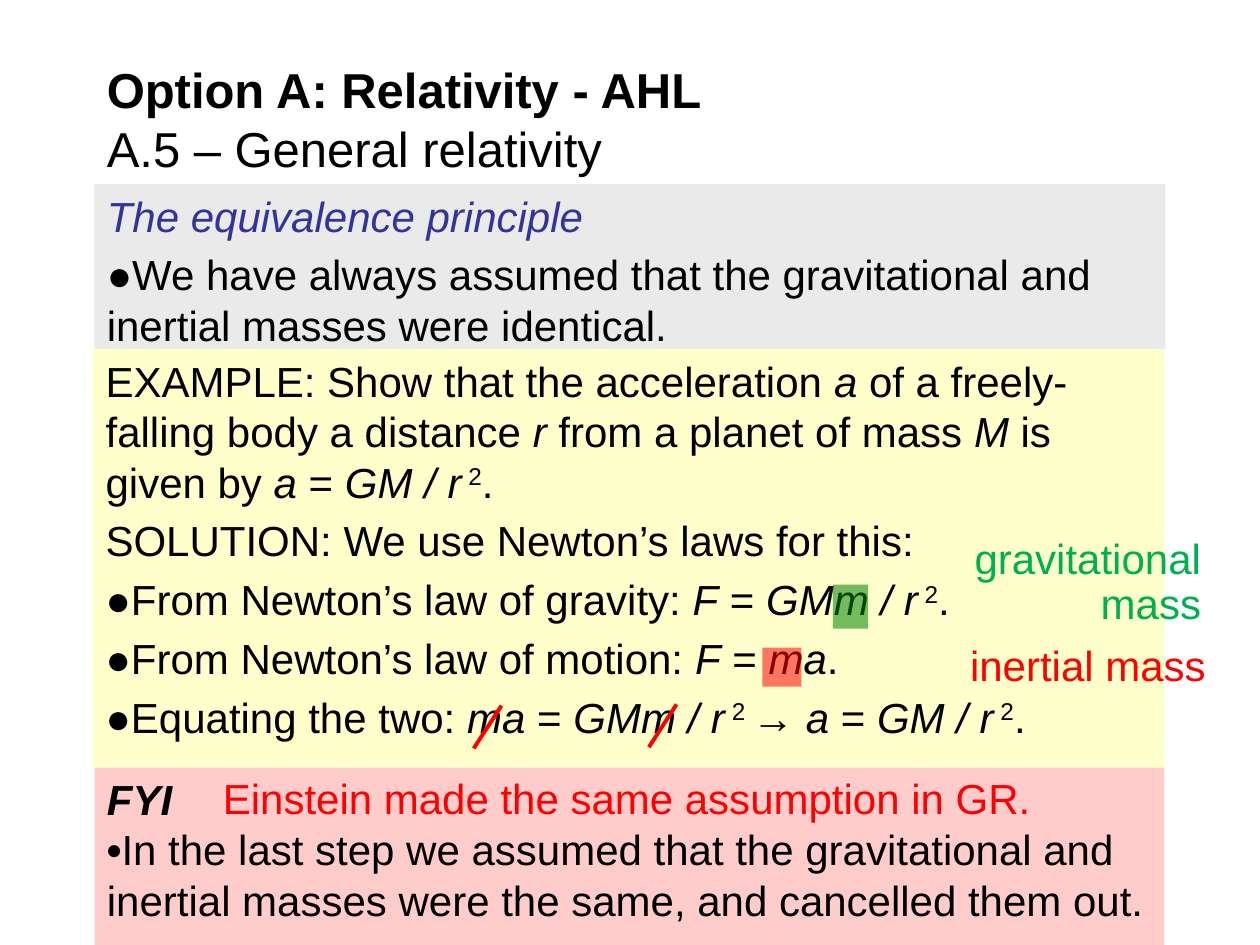
from pptx import Presentation
from pptx.dml.color import RGBColor
from pptx.enum.shapes import MSO_CONNECTOR as LINE, MSO_SHAPE as SHAPE
from pptx.enum.text import MSO_ANCHOR as ANCHOR, PP_ALIGN as ALIGN
from pptx.oxml.ns import qn
from pptx.util import Inches, Pt
from lxml import etree

BLACK = RGBColor(0, 0, 0)
BLUE = RGBColor(0x33, 0x33, 0x99)
GREEN = RGBColor(0x00, 0xB0, 0x50)
DARK = RGBColor(0x00, 0x80, 0x00)
RED = RGBColor(0xFF, 0, 0)
PINK = RGBColor(0xFF, 0xCC, 0xCC)
CREAM = RGBColor(0xFF, 0xFF, 0xCC)
GRAY = RGBColor(0xEA, 0xEA, 0xEA)

prs = Presentation()
prs.slide_width, prs.slide_height = Inches(10), Inches(7.5)
slide = prs.slides.add_slide(prs.slide_layouts[6])
shapes = slide.shapes


def write(frame, lines, color=BLACK, size=24, gap=4.8):
    """Fill a frame; _.._ marks italic and ^..^ superscript."""
    frame.word_wrap = True
    for n, line in enumerate(lines):
        para = frame.add_paragraph() if n else frame.paragraphs[0]
        para.alignment = ALIGN.LEFT
        para.space_before = Pt(gap if n else 0)
        for i, part in enumerate(line.split("_")):
            for j, bit in enumerate(part.split("^")):
                if not bit:
                    continue
                run = para.add_run()
                run.text = bit
                font = run.font
                font.name, font.size = "Arial", Pt(size)
                font.color.rgb = color
                font.italic = i % 2 == 1
                if j % 2:
                    font._element.set("baseline", "30000")


def block(x, y, w, h, color):
    rect = shapes.add_shape(SHAPE.RECTANGLE, Inches(x), Inches(y), Inches(w), Inches(h))
    rect.shadow.inherit = False
    rect.fill.solid()
    rect.fill.fore_color.rgb = color
    rect.line.fill.background()
    rect.text_frame.vertical_anchor = ANCHOR.TOP
    return rect


# Panels
note = block(0.75, 6.09, 8.49, 1.41, PINK).text_frame
write(note, [
    "_FYI_",
    "•^^In the last step we assumed that the gravitational and inertial masses "
    "were the same, and cancelled them out.",
], gap=0)
for para in note.paragraphs:
    para.runs[0].font.bold = True

proof = block(0.74, 2.77, 8.5, 3.32, CREAM).text_frame
write(proof, [
    "EXAMPLE: Show that the acceleration _a_ of a freely-falling body a distance _r_ "
    "from a planet of mass _M_ is given by _a_ = _GM / r_^ 2^.",
    "SOLUTION: We use Newton’s laws for this:",
    "_●_From Newton’s law of gravity:_ F_ = _GMm / r_^ 2^.",
    "_●_From Newton’s law of motion: _F_ = _ma_.",
    "_●_Equating the two: _ma_ = _GMm / r_^ 2 ^→ _a_ = _GM / r_^ 2^.",
])

intro = block(0.75, 1.46, 8.5, 1.31, GRAY).text_frame
write(intro, [
    "_The equivalence principle_",
    "●We have always assumed that the gravitational and inertial masses were identical.",
])
intro.paragraphs[0].runs[0].font.color.rgb = BLUE

# Coloured remarks
for x, y, w, h, text, color, align in [
    (7.38, 4.22, 2.25, 0.79, "gravitational mass", GREEN, ALIGN.RIGHT),
    (7.6, 5.07, 2.22, 0.41, "inertial mass", RED, ALIGN.LEFT),
    (1.67, 6.13, 7.81, 0.41, "Einstein made the same assumption in GR.", RED, ALIGN.LEFT),
]:
    frame = shapes.add_textbox(Inches(x), Inches(y), Inches(w), Inches(h)).text_frame
    write(frame, [text], color)
    frame.paragraphs[0].alignment = align
    frame.paragraphs[0].line_spacing = 0.9

# Translucent marks over the two masses
for x, y, w, h, color in [(6.61, 4.64, 0.28, 0.35, DARK), (6.05, 5.14, 0.31, 0.31, RED)]:
    mark = block(x, y, w, h, color)
    tint = mark._element.spPr.find(qn("a:solidFill"))[0]
    etree.SubElement(tint, qn("a:alpha")).set("val", "54000")

# Strokes that cancel the masses
for x, y in [(3.98, 5.6), (5.37, 5.59)]:
    stroke = shapes.add_connector(
        LINE.STRAIGHT, Inches(x), Inches(y), Inches(x - 0.22), Inches(y + 0.34))
    stroke.line.color.rgb = RED
    stroke.line.width = Pt(2.25)
    etree.SubElement(stroke._element.spPr, qn("a:effectLst"))

# Title
title = shapes.add_textbox(Inches(0.75), Inches(0.45), Inches(8.5), Inches(0.98)).text_frame
title.vertical_anchor = ANCHOR.MIDDLE
write(title, ["Option A: Relativity - AHL", "A.5 – General relativity"], size=28, gap=0)
title.paragraphs[0].runs[0].font.bold = True

prs.save("out.pptx")
